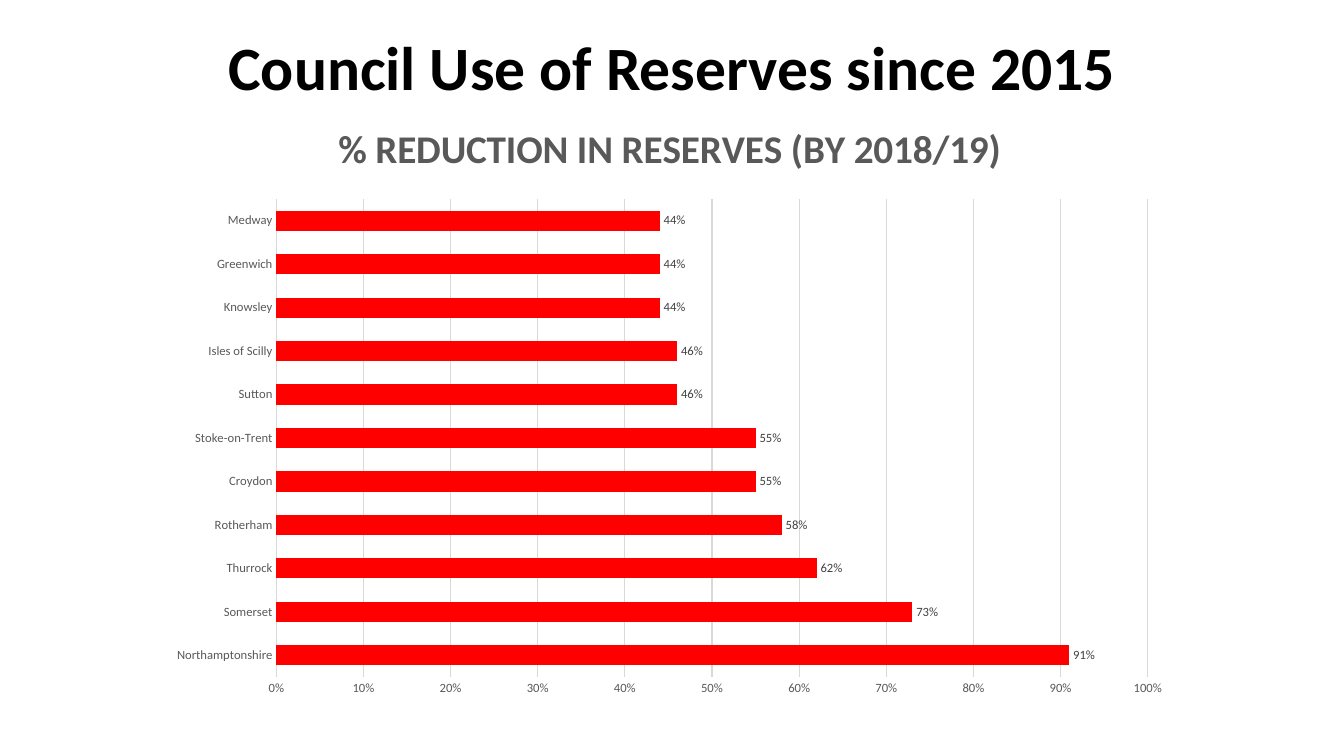
from dataclasses import dataclass

from lxml import etree
from pptx import Presentation
from pptx.chart.data import CategoryChartData
from pptx.dml.color import RGBColor
from pptx.enum.chart import XL_CHART_TYPE as ChartType
from pptx.enum.chart import XL_LABEL_POSITION as LabelPosition
from pptx.enum.chart import XL_TICK_MARK as TickMark
from pptx.enum.text import MSO_ANCHOR as Anchor
from pptx.enum.text import PP_ALIGN as Align
from pptx.oxml.ns import qn
from pptx.util import Inches, Pt


@dataclass(frozen=True)
class Theme:
    font: str = "Calibri"
    black: str = "000000"
    label: str = "404040"
    muted: str = "595959"
    grid: str = "D9D9D9"
    bar: str = "FF0000"
    title_size: float = 44
    chart_title_size: float = 28
    chart_size: float = 10
    label_size: float = 9


THEME = Theme()
SLIDE_WIDTH, SLIDE_HEIGHT = 13.33, 7.5
TITLE_BOX = (0.92, 0.3, 11.5, 0.79)
CHART_BOX = (1.55, 0.97, 10.18, 6.05)
PLOT_SHARES = {"x": 0.117, "y": 0.166, "w": 0.849, "h": 0.784}

RESERVE_REDUCTIONS = {
    "Northamptonshire": 0.91,
    "Somerset": 0.73,
    "Thurrock": 0.62,
    "Rotherham": 0.58,
    "Croydon": 0.55,
    "Stoke-on-Trent": 0.55,
    "Sutton": 0.46,
    "Isles of Scilly": 0.46,
    "Knowsley": 0.44,
    "Greenwich": 0.44,
    "Medway": 0.44,
}


def style_font(font, size, color, bold=False):
    font.name = THEME.font
    font.size = Pt(size)
    font.bold = bold
    font.color.rgb = RGBColor.from_string(color)


def style_line(line, color, width):
    line.color.rgb = RGBColor.from_string(color)
    line.width = Pt(width)


def add_title(slide, box, text):
    shape = slide.shapes.add_textbox(*map(Inches, box))
    frame = shape.text_frame
    frame.word_wrap = True
    frame.vertical_anchor = Anchor.MIDDLE
    paragraph = frame.paragraphs[0]
    paragraph.alignment = Align.CENTER
    paragraph.line_spacing = 0.9
    run = paragraph.add_run()
    run.text = text
    style_font(run.font, THEME.title_size, THEME.black, bold=True)


def place_plot(chart, shares):
    """Fix the inner plot area as shares of the chart's size."""
    plot_area = chart.plots[0]._element.getparent()
    for old_layout in plot_area.findall(qn("c:layout")):
        plot_area.remove(old_layout)
    layout = etree.Element(qn("c:layout"))
    manual = etree.SubElement(layout, qn("c:manualLayout"))
    settings = {"layoutTarget": "inner", "xMode": "edge", "yMode": "edge", **shares}
    for name, value in settings.items():
        etree.SubElement(manual, qn(f"c:{name}")).set("val", str(value))
    plot_area.insert(0, layout)


def style_axes(chart):
    for axis in (chart.category_axis, chart.value_axis):
        axis.major_tick_mark = axis.minor_tick_mark = TickMark.NONE
        style_font(axis.tick_labels.font, THEME.label_size, THEME.muted)
    style_line(chart.category_axis.format.line, THEME.grid, 1)

    value_axis = chart.value_axis
    value_axis.minimum_scale, value_axis.maximum_scale = 0, 1
    value_axis.major_unit = 0.1
    value_axis.tick_labels.number_format = "0%"
    value_axis.tick_labels.number_format_is_linked = False
    value_axis.format.line.fill.background()
    value_axis.has_major_gridlines = True
    style_line(value_axis.major_gridlines.format.line, THEME.grid, 0.75)


def style_bars(plot):
    plot.gap_width = 115
    plot.overlap = -20
    plot.vary_by_categories = False
    fill = plot.series[0].format.fill
    fill.solid()
    fill.fore_color.rgb = RGBColor.from_string(THEME.bar)
    plot.has_data_labels = True
    labels = plot.data_labels
    labels.show_value = True
    labels.position = LabelPosition.OUTSIDE_END
    labels.number_format = "0%"
    labels.number_format_is_linked = False
    style_font(labels.font, THEME.label_size, THEME.label)


def add_reserves_chart(slide, box, title):
    data = CategoryChartData(number_format="0%")
    data.categories = RESERVE_REDUCTIONS.keys()
    data.add_series("Series 1", RESERVE_REDUCTIONS.values())
    chart = slide.shapes.add_chart(
        ChartType.BAR_CLUSTERED, *map(Inches, box), data
    ).chart
    style_font(chart.font, THEME.chart_size, THEME.black)
    chart.has_legend = False
    chart.has_title = True
    run = chart.chart_title.text_frame.paragraphs[0].add_run()
    run.text = title
    style_font(run.font, THEME.chart_title_size, THEME.muted, bold=True)
    chart.chart_title.include_in_layout = False
    style_axes(chart)
    style_bars(chart.plots[0])
    place_plot(chart, PLOT_SHARES)


def main():
    presentation = Presentation()
    presentation.slide_width = Inches(SLIDE_WIDTH)
    presentation.slide_height = Inches(SLIDE_HEIGHT)
    slide = presentation.slides.add_slide(presentation.slide_layouts[6])
    add_title(slide, TITLE_BOX, "Council Use of Reserves since 2015")
    add_reserves_chart(slide, CHART_BOX, "% REDUCTION IN RESERVES (BY 2018/19)")
    presentation.save("out.pptx")


if __name__ == "__main__":
    main()
